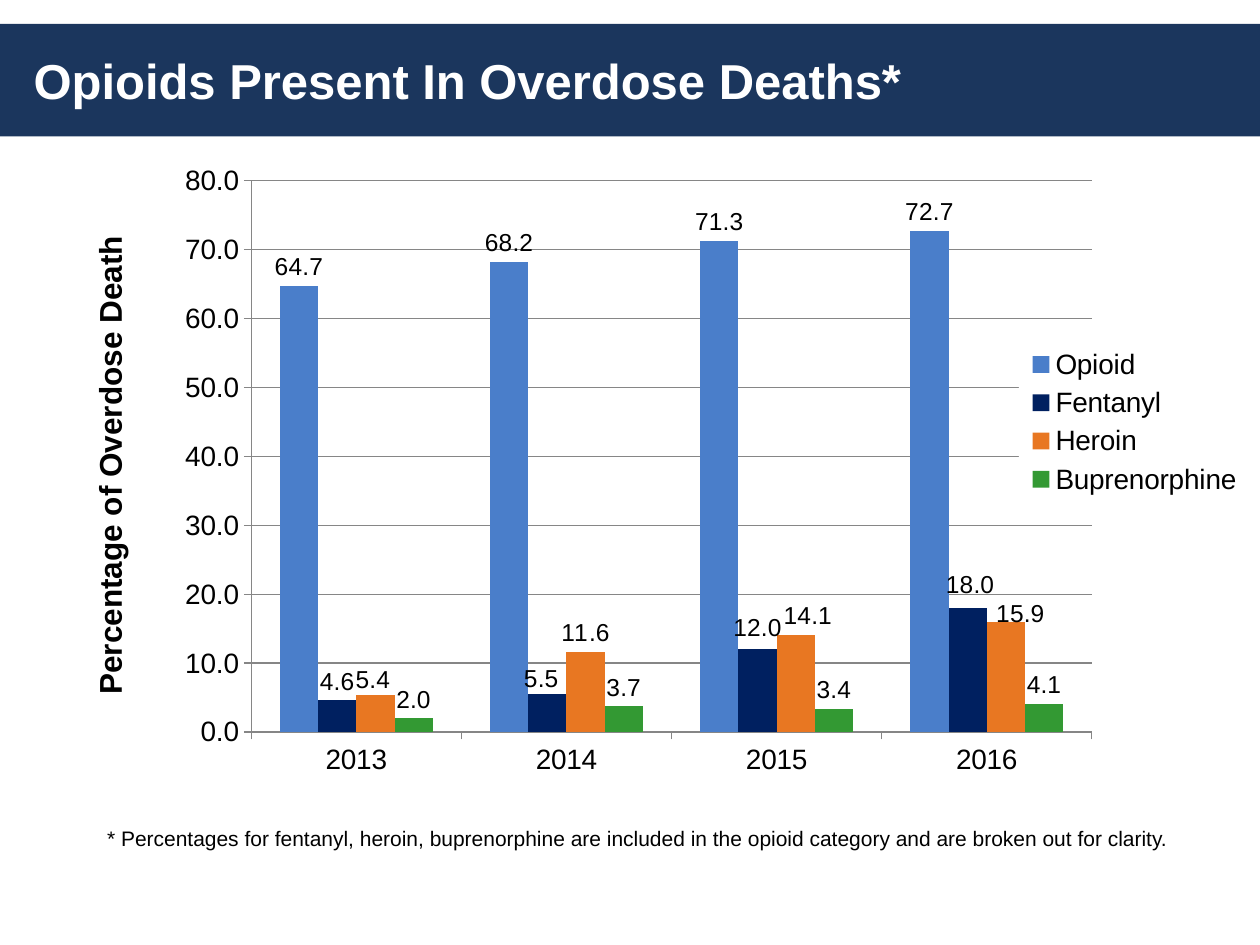
import lxml.etree
import pptx
import pptx.chart.data
import pptx.dml.color
import pptx.enum.chart
import pptx.enum.shapes
import pptx.enum.text
import pptx.oxml
import pptx.oxml.ns
import pptx.util

Cm = pptx.util.Cm
RGBColor = pptx.dml.color.RGBColor
NAVY = RGBColor(0x1B, 0x36, 0x5D)
WHITE = RGBColor(0xFF, 0xFF, 0xFF)
BLACK = RGBColor(0, 0, 0)
GREY = RGBColor(0x86, 0x86, 0x86)
BLUE = RGBColor(0x4A, 0x7E, 0xCA)
DARK_BLUE = RGBColor(0x00, 0x20, 0x60)
ORANGE = RGBColor(0xE8, 0x77, 0x22)
GREEN = RGBColor(0x33, 0x99, 0x33)

FONT = "Arial"
YEARS = ["2013", "2014", "2015", "2016"]
DRUGS = [
    ("Opioid", BLUE, [64.7, 68.2, 71.3, 72.7]),
    ("Fentanyl", DARK_BLUE, [4.6, 5.5, 12.0, 18.0]),
    ("Heroin", ORANGE, [5.4, 11.6, 14.1, 15.9]),
    ("Buprenorphine", GREEN, [2.0, 3.7, 3.4, 4.1]),
]
LABEL_SHIFTS = {
    "Fentanyl": {1: (-0.005, 0.005), 2: (0, -0.003), 3: (0.002, -0.006)},
    "Heroin": {0: (-0.002, 0.005), 2: (0.01, 0), 3: (0.012, 0.014)},
}


def format_font(font, size, color=BLACK, bold=False):
    """Set typeface, size, colour and weight of a font."""
    font.name = FONT
    font.size = pptx.util.Pt(size)
    font.bold = bold
    font.color.rgb = color


def add_text(page, box, text, size, color=BLACK, bold=False, align=None, anchor=None, vert=None):
    """Add a one-paragraph text box."""
    frame = page.shapes.add_textbox(*box).text_frame
    frame.word_wrap = True
    if anchor is not None:
        frame.vertical_anchor = anchor
    if vert:
        frame._txBody.bodyPr.set("vert", vert)
    para = frame.paragraphs[0]
    para.alignment = align
    span = para.add_run()
    span.text = text
    format_font(span.font, size, color, bold)


def make_layout(x, y, width=None, height=None, inner=False):
    """Build a manual chart layout; without a size it is an offset."""
    parts = [("layoutTarget", "inner")] if inner else []
    if width is not None:
        parts += [("xMode", "edge"), ("yMode", "edge")]
    parts += [("x", x), ("y", y)]
    if width is not None:
        parts += [("w", width), ("h", height)]
    layout = pptx.oxml.parse_xml(f"<c:layout {pptx.oxml.ns.nsdecls('c')}><c:manualLayout/></c:layout>")
    for tag, value in parts:
        lxml.etree.SubElement(layout[0], pptx.oxml.ns.qn(f"c:{tag}"), val=str(value))
    return layout


def replace_layout(parent, layout, follows=None):
    """Put a layout into a chart part, after the named child or first."""
    for old in parent.findall(pptx.oxml.ns.qn("c:layout")):
        parent.remove(old)
    if follows:
        parent.find(pptx.oxml.ns.qn(follows)).addnext(layout)
    else:
        parent.insert(0, layout)


def format_axis(axis):
    """Style an axis with outside ticks and grey lines."""
    axis.major_tick_mark = pptx.enum.chart.XL_TICK_MARK.OUTSIDE
    axis.minor_tick_mark = pptx.enum.chart.XL_TICK_MARK.NONE
    axis.format.line.color.rgb = GREY
    format_font(axis.tick_labels.font, 16)


def format_series(series, name, color):
    """Colour a series and place its value labels."""
    series.format.fill.solid()
    series.format.fill.fore_color.rgb = color
    series.invert_if_negative = False
    above = pptx.enum.chart.XL_LABEL_POSITION.OUTSIDE_END
    labels = series.data_labels
    labels.show_value = True
    labels.position = above
    labels.number_format = "0.0"
    labels.number_format_is_linked = False
    format_font(labels.font, 14)
    for index, shift in LABEL_SHIFTS.get(name, {}).items():
        label = series.points[index].data_label
        label.position = above
        format_font(label.font, 14)
        element = series._element.xpath(f"c:dLbls/c:dLbl[c:idx/@val='{index}']")[0]
        replace_layout(element, make_layout(*shift), "c:idx")


def format_legend(chart):
    """Place the white legend over the right end of the plot."""
    chart.has_legend = True
    legend = chart.legend
    legend.position = pptx.enum.chart.XL_LEGEND_POSITION.RIGHT
    legend.include_in_layout = False
    format_font(legend.font, 16)
    element = legend._element
    replace_layout(element, make_layout(0.8, 0.24, 0.19, 0.21), "c:legendPos")
    fill = pptx.oxml.parse_xml(
        f"<c:spPr {pptx.oxml.ns.nsdecls('c', 'a')}><a:solidFill>"
        f'<a:srgbClr val="{WHITE}"/></a:solidFill></c:spPr>'
    )
    element.find(pptx.oxml.ns.qn("c:overlay")).addnext(fill)


def add_title_band(page, left, top, width, height):
    """Draw the title band and its heading."""
    band = page.shapes.add_shape(pptx.enum.shapes.MSO_SHAPE.RECTANGLE, left, top, width, height)
    band.shadow.inherit = False
    band.fill.solid()
    band.fill.fore_color.rgb = NAVY
    band.line.fill.background()
    inset = Cm(0.43)
    add_text(page, (left + inset, top, width - 2 * inset, height),
             "Opioids Present In Overdose Deaths*", 28, WHITE, True,
             anchor=pptx.enum.text.MSO_ANCHOR.MIDDLE)


def add_death_chart(page, left, top, width, height):
    """Draw the column chart with its axis title and footnote."""
    data = pptx.chart.data.CategoryChartData(number_format="0.0")
    data.categories = YEARS
    for name, _, values in DRUGS:
        data.add_series(name, values)
    kind = pptx.enum.chart.XL_CHART_TYPE.COLUMN_CLUSTERED
    chart = page.shapes.add_chart(kind, left, top, width, height, data).chart
    chart.has_title = False
    format_font(chart.font, 16)
    plot = chart.plots[0]
    plot.gap_width = 150
    plot.overlap = 0
    plot.vary_by_categories = False
    for series, (name, color, _) in zip(plot.series, DRUGS):
        format_series(series, name, color)
    format_axis(chart.category_axis)
    axis = chart.value_axis
    format_axis(axis)
    axis.minimum_scale, axis.maximum_scale, axis.major_unit = 0, 80, 10
    axis.has_major_gridlines = True
    axis.major_gridlines.format.line.color.rgb = GREY
    axis.tick_labels.number_format = "0.0"
    axis.tick_labels.number_format_is_linked = False
    format_legend(chart)
    area = chart._chartSpace.chart.plotArea
    replace_layout(area, make_layout(0.17, 0.03, 0.69, 0.72, inner=True))

    add_text(page, (left + Cm(1.02), top + Cm(13.33), Cm(22.23), Cm(0.76)),
             "* Percentages for fentanyl, heroin, buprenorphine are included in "
             "the opioid category and are broken out for clarity.", 12)
    add_text(page, (left + Cm(0.81), top + Cm(0.2), Cm(1.27), Cm(12)),
             "Percentage of Overdose Death", 18, bold=True,
             align=pptx.enum.text.PP_ALIGN.CENTER, vert="vert270")


def main():
    """Build and save the deck."""
    deck = pptx.Presentation()
    deck.slide_width, deck.slide_height = Cm(25.4), Cm(19.05)
    page = deck.slides.add_slide(deck.slide_layouts[6])
    add_title_band(page, Cm(0), Cm(0.48), deck.slide_width, Cm(2.27))
    add_death_chart(page, Cm(0.89), Cm(3.18), Cm(24.56), Cm(15.44))
    deck.save("out.pptx")


if __name__ == "__main__":
    main()
